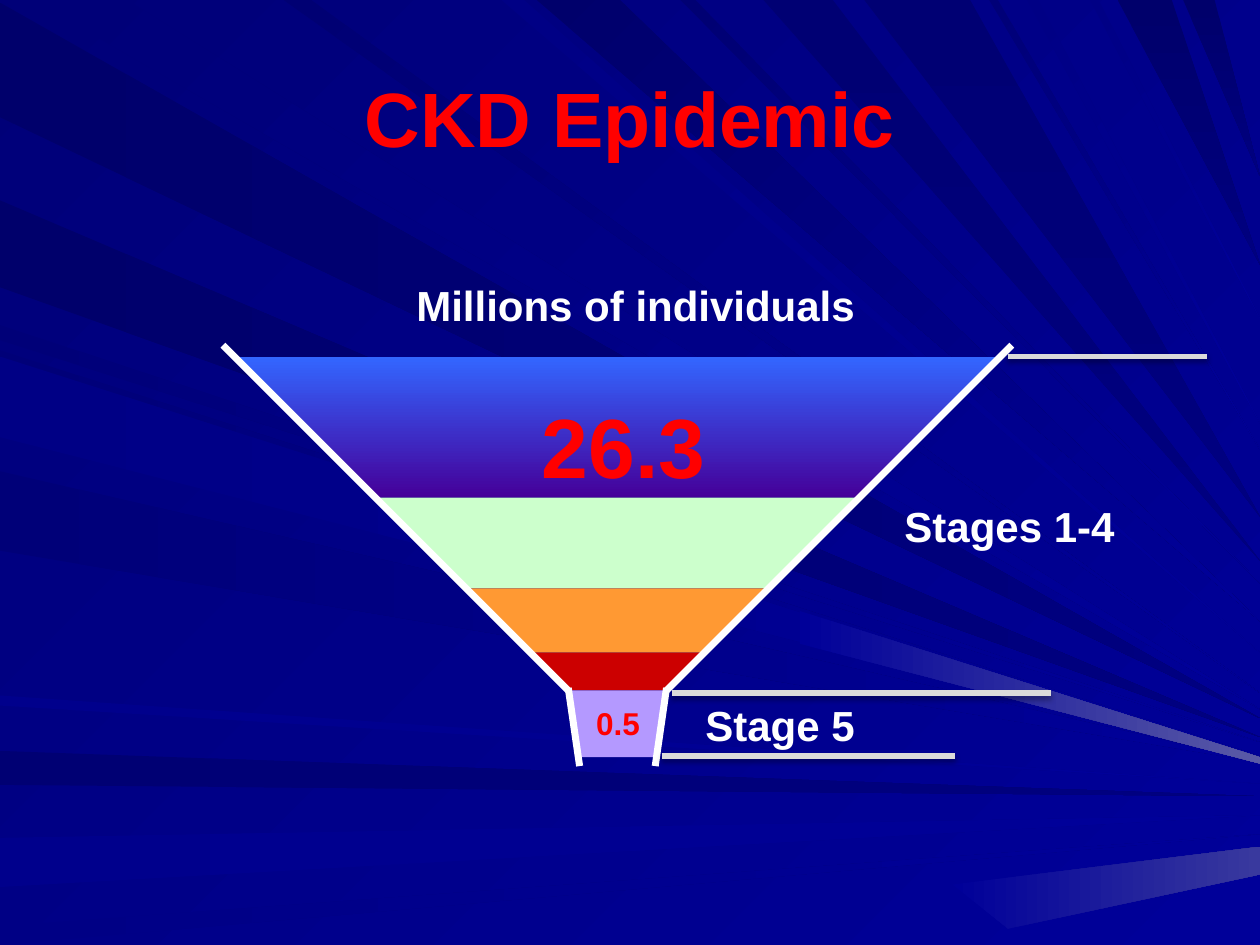
import pptx
import pptx.dml.color
import pptx.enum.shapes
import pptx.enum.text
import pptx.util
from lxml import etree
from pptx.oxml.ns import qn
from pptx.util import Cm, Pt


class Theme:
    font = "Arial"
    title_size, total_size, label_size, small_size = Pt(44), Pt(48), Pt(24), Pt(18)
    red, white, rule, shadow = "FF0000", "FFFFFF", "DADADA", "000000"
    ink, dusk, night, dawn, day = "00006B", "000073", "000078", "000085", "00008C"
    deep, royal, haze, slate = "000080", "000099", "39399E", "5A5AA6"
    blue, purple = "3366FF", "450099"
    green, orange, crimson, lilac = "CCFFCC", "FF9933", "CC0000", "B499FF"
    wall_width, rule_width = Pt(4), Pt(3)


CM_PER_UNIT = 2.54  # the layout grid is 10 x 7.5 units
RIGHT = 10
rgb = pptx.dml.color.RGBColor.from_string


def paint(fill, start, end, angle):
    """Fill plainly, or with a gradient whose angle runs clockwise."""
    if start == end:
        fill.solid()
        fill.fore_color.rgb = rgb(start)
        return
    fill.gradient()
    fill.gradient_angle = (360 - angle) % 360
    for stop, color in zip(fill.gradient_stops, (start, end)):
        stop.color.rgb = rgb(color)


def add_area(corners, start, end, angle):
    first, *others = [(Cm(x * CM_PER_UNIT), Cm(y * CM_PER_UNIT)) for x, y in corners]
    outline = slide.shapes.build_freeform(*first)
    outline.add_line_segments(others, close=True)
    area = outline.convert_to_shape()
    area.shadow.inherit = False
    area.line.fill.background()
    paint(area.fill, start, end, angle)


presentation = pptx.Presentation()
presentation.slide_width, presentation.slide_height = Cm(25.4), Cm(19.05)
slide = presentation.slides.add_slide(presentation.slide_layouts[6])
paint(slide.background.fill, Theme.night, Theme.royal, 45)

# Each ray spans from..to on the left or top edge and narrows to a tip on the right edge
left_rays = [
    (0.02, 0.93, 5.7, Theme.ink, Theme.deep),
    (5.96, 6.23, 6.32, Theme.dusk, Theme.deep),
    (6.65, 7.04, 6.47, Theme.day, Theme.royal),
    (7.35, 7.5, 6.62, Theme.dawn, Theme.royal),
    (2.58, 2.7, 5.89, Theme.night, Theme.royal),
    (1.59, 2.28, 5.85, Theme.ink, Theme.deep),
    (2.78, 3.42, 6, Theme.night, Theme.royal),
    (3.74, 4.37, 6.05, Theme.night, Theme.royal),
    (5.52, 5.6, 6.22, Theme.day, Theme.royal),
    (2.83, 3.47, 6.03, Theme.dawn, Theme.royal),
]
top_rays = [
    (0.26, 1.01, 5.63, Theme.night, Theme.royal),
    (3.98, 4.16, 5.18, Theme.dawn, Theme.royal),
    (4.26, 4.92, 4.93, Theme.ink, Theme.royal),
    (5.4, 5.52, 4.63, Theme.dusk, Theme.royal),
    (6.06, 6.61, 4.45, Theme.dusk, Theme.deep),
    (8.87, 9.3, 2.1, Theme.ink, Theme.deep),
    (9.39, 9.64, 1.4, Theme.ink, Theme.deep),
    (2.25, 2.47, 5.5, Theme.dusk, Theme.royal),
    (6.86, 7.7, 4.1, Theme.dusk, Theme.deep),
    (7.85, 7.92, 3.57, Theme.night, Theme.royal),
    (8.15, 8.24, 3.36, Theme.dawn, Theme.royal),
    (8.65, 8.72, 2.53, Theme.dawn, Theme.royal),
]
for begin, finish, tip, start, end in top_rays:
    add_area([(begin, 0), (RIGHT, tip), (finish, 0)], start, end, 90 if end == Theme.deep else 45)
for begin, finish, tip, start, end in left_rays:
    add_area([(0, begin), (RIGHT, tip), (0, finish)], start, end, 0)
for corners, glow in (
        ([(6.35, 4.85), (6.35, 5.11), (RIGHT, 6.06), (RIGHT, 6.01)], Theme.slate),
        ([(7.56, 7.02), (8, 7.37), (RIGHT, 6.94), (RIGHT, 6.72)], Theme.haze)):
    add_area(corners, Theme.royal, glow, 0)

# The funnel is symmetric; its walls slope at 45 degrees down to the neck
axis, apex, neck, spout_end = 4.9, 5.87, 5.48, 6.01
neck_half, spout_half = 0.39, 0.32
levels = [2.83, 3.95, 4.67, 5.18, neck]
layer_colors = [(Theme.purple, Theme.blue), (Theme.green,) * 2,
                (Theme.orange,) * 2, (Theme.crimson,) * 2]
slices = [(upper, apex - upper, lower, apex - lower, colors)
          for upper, lower, colors in zip(levels, levels[1:], layer_colors)]
slices.append((neck, neck_half, spout_end, spout_half, (Theme.lilac,) * 2))
for upper, upper_half, lower, lower_half, colors in slices:
    add_area([(axis - upper_half, upper), (axis + upper_half, upper),
              (axis + lower_half, lower), (axis - lower_half, lower)], *colors, 270)

# Walls are plain; stage rules cast a soft shadow downwards
rim, wall_end = 2.74, 6.08
strokes = []
for side in (-1, 1):
    strokes += [
        (axis + side * (apex - rim), rim, axis + side * neck_half, neck, False),
        (axis + side * neck_half, neck - 0.02, axis + side * 0.3, wall_end, False)]
strokes += [(begin, y, finish, y, True) for begin, finish, y in
            [(5.33, 8.34, 5.5), (5.25, 7.58, 6), (8, 9.58, 2.83)]]
for *ends, is_rule in strokes:
    stroke = slide.shapes.add_connector(
        pptx.enum.shapes.MSO_CONNECTOR.STRAIGHT, *[Cm(v * CM_PER_UNIT) for v in ends])
    stroke.line.color.rgb = rgb(Theme.rule if is_rule else Theme.white)
    stroke.line.width = Theme.rule_width if is_rule else Theme.wall_width
    effects = etree.SubElement(stroke._element.spPr, qn("a:effectLst"))
    if is_rule:
        shadow = etree.SubElement(effects, qn("a:outerShdw"), blurRad=str(Pt(3.1)),
                                  dist=str(Pt(1.8)), dir="5400000", rotWithShape="0")
        shade = etree.SubElement(shadow, qn("a:srgbClr"), val=Theme.shadow)
        etree.SubElement(shade, qn("a:alpha"), val="35000")

left, center = pptx.enum.text.PP_ALIGN.LEFT, pptx.enum.text.PP_ALIGN.CENTER
labels = [
    ("CKD Epidemic", (0.5, 0.3, 9, 1.25), Theme.title_size, Theme.red, center),
    ("Millions of individuals", (2.67, 2.17, 4.75, 0.5), Theme.label_size, Theme.white, center),
    ("26.3", (3.75, 3.08, 2.4, 0.91), Theme.total_size, Theme.red, center),
    ("0.5", (4.57, 5.54, 0.67, 0.4), Theme.small_size, Theme.red, center),
    ("Stages 1-4", (7.08, 3.92, 2.25, 0.5), Theme.label_size, Theme.white, left),
    ("Stage 5", (5.5, 5.5, 1.4, 0.5), Theme.label_size, Theme.white, left),
]
for wording, frame, size, color, alignment in labels:
    label = slide.shapes.add_textbox(*[Cm(v * CM_PER_UNIT) for v in frame]).text_frame
    label.word_wrap = wording != "Stage 5"
    label.vertical_anchor = pptx.enum.text.MSO_ANCHOR.MIDDLE
    label.text = wording
    paragraph = label.paragraphs[0]
    paragraph.alignment = alignment
    paragraph.font.name = Theme.font
    paragraph.font.size = size
    paragraph.font.bold = True
    paragraph.font.color.rgb = rgb(color)

presentation.save("out.pptx")
